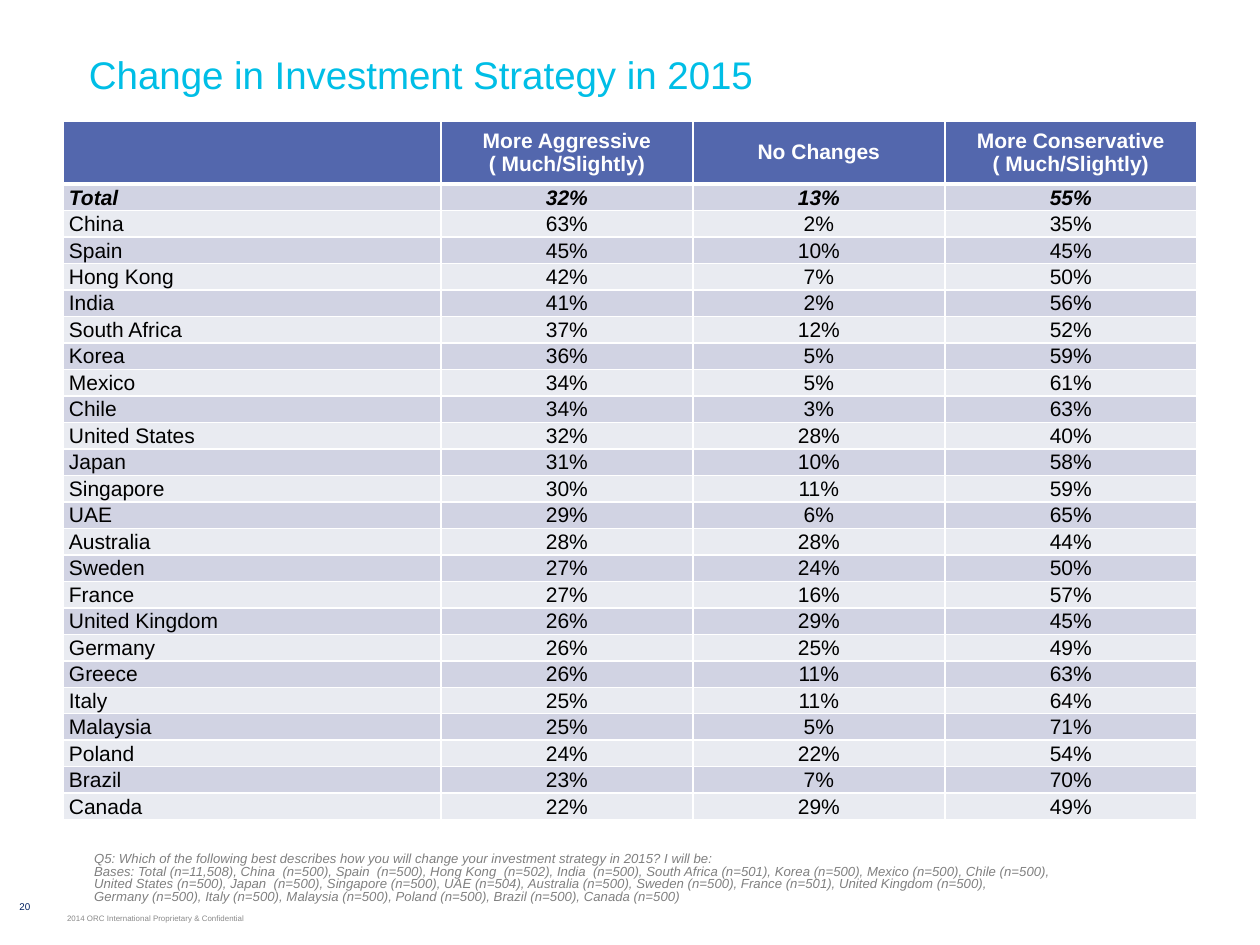
from copy import deepcopy
from dataclasses import dataclass

from lxml.etree import SubElement
from pptx import Presentation
from pptx.dml.color import RGBColor
from pptx.enum.text import MSO_ANCHOR, PP_ALIGN
from pptx.oxml.ns import qn
from pptx.util import Emu, Pt

PX = 914400 // 126  # EMU in one px


@dataclass(frozen=True)
class Theme:
    font: str = "Arial"
    title: str = "00BEE6"
    head: str = "5367AD"
    bands: tuple = ("D1D3E3", "E9EBF1")
    white: str = "FFFFFF"
    ink: str = "000000"
    note: str = "808080"
    foot: str = "898989"
    page: str = "002060"
    title_pt: float = 22
    cell_pt: float = 12
    note_pt: float = 7.5
    page_pt: float = 5.6
    foot_pt: float = 4.5


THEME = Theme()


def write(frame, text, size, color, bold=False, italic=False,
          align=PP_ALIGN.LEFT, space=None):
    """Fill a frame: a list item is a paragraph, a newline is a line break."""
    lines = text if isinstance(text, list) else [text]
    for i, line in enumerate(lines):
        para = frame.add_paragraph() if i else frame.paragraphs[0]
        para.text = line
        para.alignment = align
        if space:
            para.line_spacing = space
        for run in para.runs:
            font = run.font
            font.name, font.size = THEME.font, Pt(size)
            font.bold, font.italic = bold, italic
            font.color.rgb = RGBColor.from_string(color)
        # Line breaks take the format of the text around them
        for brk in para._p.findall(qn("a:br")):
            brk.insert(0, deepcopy(para.runs[0]._r.rPr))


def pad(item, left, top, right, bottom):
    item.margin_left, item.margin_top = Emu(left * PX), Emu(top * PX)
    item.margin_right, item.margin_bottom = Emu(right * PX), Emu(bottom * PX)


class Deck:
    def __init__(self, theme, wide, high):
        self.theme = theme
        self.prs = Presentation()
        self.prs.slide_width, self.prs.slide_height = Emu(wide * PX), Emu(high * PX)
        self.slide = self.prs.slides.add_slide(self.prs.slide_layouts[6])

    def text(self, text, box, inset, anchor=MSO_ANCHOR.MIDDLE, **style):
        shape = self.slide.shapes.add_textbox(*[Emu(n * PX) for n in box])
        frame = shape.text_frame
        frame.word_wrap = True
        frame.vertical_anchor = anchor
        pad(frame, *inset)
        write(frame, text, **style)

    def edges(self, cell, **widths):
        props = cell._tc.get_or_add_tcPr()
        for i, side in enumerate("LRTB"):
            line = SubElement(props, qn(f"a:ln{side}"),
                              w=str(Pt(widths.get(side, 1))))
            fill = SubElement(line, qn("a:solidFill"))
            SubElement(fill, qn("a:srgbClr"), val=self.theme.white)
            props.insert(i, line)

    def cell(self, cell, text, fill, inset, edges, **style):
        cell.fill.solid()
        cell.fill.fore_color.rgb = RGBColor.from_string(fill)
        cell.vertical_anchor = MSO_ANCHOR.MIDDLE
        pad(cell, *inset)
        self.edges(cell, **edges)
        write(cell.text_frame, text, size=self.theme.cell_pt, **style)

    def table(self, heads, rows, box, cols, top):
        look = self.theme
        grid = self.slide.shapes.add_table(
            len(rows) + 1, len(cols), *[Emu(n * PX) for n in box]).table
        grid.horz_banding = False
        for col, wide in zip(grid.columns, cols):
            col.width = Emu(wide * PX)
        for row in grid.rows:
            row.height = Emu((box[3] - top) * PX // len(rows))
        grid.rows[0].height = Emu(top * PX)

        # Header row
        for c, head in enumerate(heads):
            self.cell(grid.cell(0, c), head, look.head, (1, 1, 1, 1), {"B": 3},
                      color=look.white, bold=True, align=PP_ALIGN.CENTER)

        # Body rows, with the total in bold italics
        for r, (name, *shares) in enumerate(rows):
            total = r == 0
            for c, text in enumerate([name] + [f"{n}%" for n in shares]):
                self.cell(grid.cell(r + 1, c), text, look.bands[r % 2],
                          (1 if c else 6, 1, 1, 0), {"T": 3} if total else {},
                          color=look.ink, bold=total, italic=total,
                          align=PP_ALIGN.CENTER if c else PP_ALIGN.LEFT)


HEADS = ["", ["More Aggressive", "( Much/Slightly)"], "No Changes",
         ["More Conservative", "( Much/Slightly)"]]

ROWS = [
    ("Total", 32, 13, 55),
    ("China", 63, 2, 35),
    ("Spain", 45, 10, 45),
    ("Hong Kong", 42, 7, 50),
    ("India", 41, 2, 56),
    ("South Africa", 37, 12, 52),
    ("Korea", 36, 5, 59),
    ("Mexico", 34, 5, 61),
    ("Chile", 34, 3, 63),
    ("United States", 32, 28, 40),
    ("Japan", 31, 10, 58),
    ("Singapore", 30, 11, 59),
    ("UAE", 29, 6, 65),
    ("Australia", 28, 28, 44),
    ("Sweden", 27, 24, 50),
    ("France", 27, 16, 57),
    ("United Kingdom", 26, 29, 45),
    ("Germany", 26, 25, 49),
    ("Greece", 26, 11, 63),
    ("Italy", 25, 11, 64),
    ("Malaysia", 25, 5, 71),
    ("Poland", 24, 22, 54),
    ("Brazil", 23, 7, 70),
    ("Canada", 22, 29, 49),
]

NOTES = [
    "Q5: Which of the following best describes how you will change your "
    "investment strategy in 2015? I will be:",
    "Bases: Total (n=11,508), China  (n=500), Spain  (n=500), Hong Kong  (n=502), "
    "India  (n=500), South Africa (n=501), Korea (n=500), Mexico (n=500), "
    "Chile (n=500), United States (n=500), Japan  (n=500), Singapore (n=500), "
    "UAE (n=504), Australia (n=500), Sweden (n=500), France (n=501), "
    "United Kingdom (n=500), \n"
    "Germany (n=500), Italy (n=500), Malaysia (n=500), Poland (n=500), "
    "Brazil (n=500), Canada (n=500)",
]


def main():
    deck = Deck(THEME, 1260, 945)

    # Page number and footer
    deck.text("20", (0, 882, 50, 50), (0, 4, 0, 4), size=THEME.page_pt,
              color=THEME.page, align=PP_ALIGN.CENTER)
    deck.text("2014 ORC International Proprietary & Confidential",
              (67, 906, 324, 25), (0, 4, 0, 4),
              size=THEME.foot_pt, color=THEME.foot)

    # Title
    deck.text("Change in Investment Strategy in 2015", (76, 32, 1134, 84),
              (13, 6, 13, 6), size=THEME.title_pt, color=THEME.title)

    # Question and bases
    deck.text(NOTES, (93, 856, 982, 54), (1, 6, 6, 6), MSO_ANCHOR.BOTTOM,
              size=THEME.note_pt, color=THEME.note, italic=True, space=0.8)

    # Results by country
    deck.table(HEADS, ROWS, (63, 121, 1134, 699), (378, 252, 252, 252), 63)

    deck.prs.save("out.pptx")


if __name__ == "__main__":
    main()
